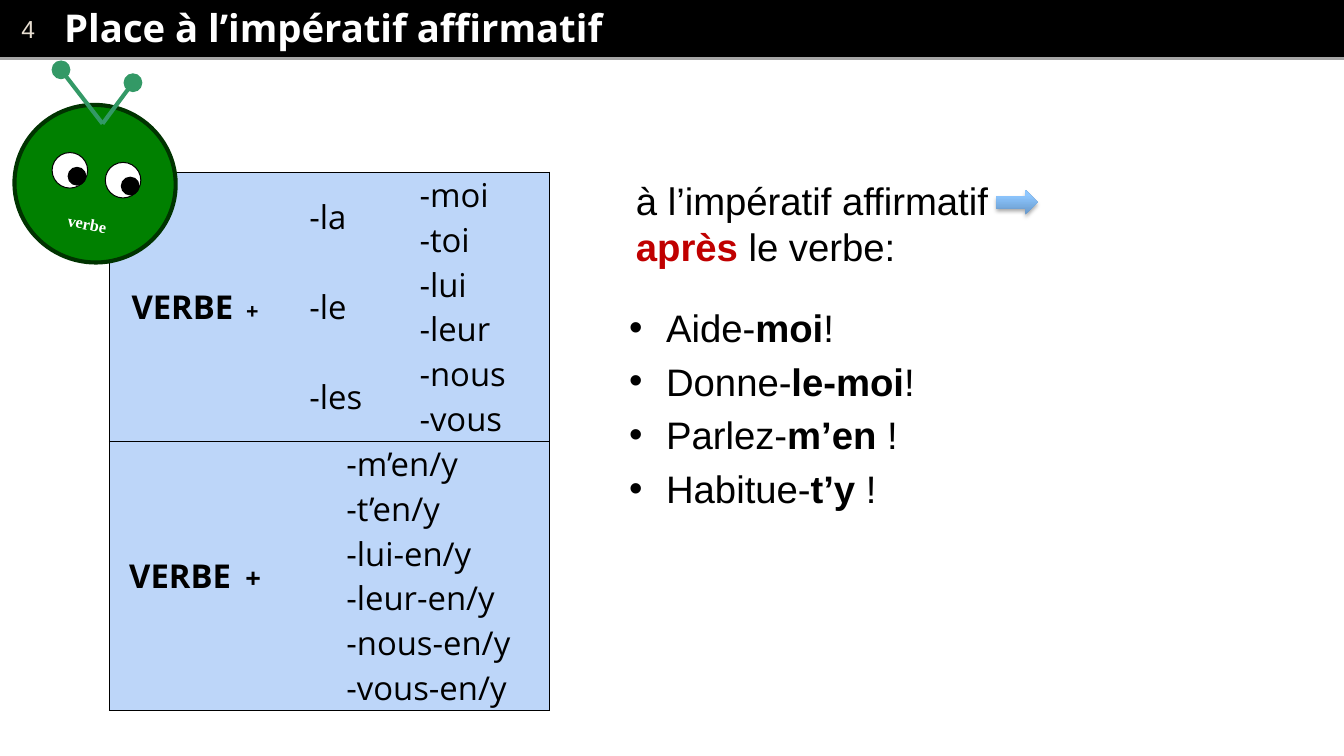
from dataclasses import dataclass

from lxml.etree import SubElement
from pptx import Presentation
from pptx.dml.color import RGBColor
from pptx.enum.shapes import MSO_CONNECTOR, MSO_SHAPE
from pptx.enum.text import MSO_ANCHOR, PP_ALIGN
from pptx.oxml.ns import qn
from pptx.util import Pt


@dataclass(frozen=True)
class Theme:
    black: str = "000000"
    white: str = "FFFFFF"
    page_number: str = "E7DED1"
    rule: str = "A6A6A6"
    cell: str = "BDD6F9"
    accent: str = "C00000"
    skin: str = "008000"
    skin_edge: str = "003300"
    antenna: str = "339966"
    arrow_dark: str = "6798CA"
    arrow_light: str = "8EC7FF"
    heading_font: str = "Open Sans"
    body_font: str = "Arial"
    label_font: str = "Times New Roman"
    large: int = 28
    medium: int = 24
    gap: int = 20
    number: int = 18
    small: int = 16
    label: int = 12


THEME = Theme()
TILT = 10.7
LINE_HEIGHT = 32.8


def rgb(code):
    return RGBColor.from_string(code)


def write(paragraph, text, size=THEME.medium, font=THEME.heading_font,
          color=THEME.black, bold=False, accent=None, align=None, before=None,
          indent=0, bullet=None):
    """Append text to a paragraph; parts between ** are bold, in the accent colour if given."""
    for index, part in enumerate(text.split("**")):
        if not part:
            continue
        strong = index % 2 == 1
        run = paragraph.add_run()
        run.text = part
        run.font.size = Pt(size)
        run.font.name = font
        run.font.bold = bold or strong
        run.font.color.rgb = rgb(accent if strong and accent else color)
    if align is not None:
        paragraph.alignment = align
    if before is not None:
        paragraph.space_before = Pt(before)
    properties = paragraph._p.get_or_add_pPr()
    if indent:
        properties.set("marL", str(Pt(indent)))
    if bullet:
        properties.set("indent", str(-Pt(indent)))
        SubElement(properties, qn("a:buFont"), typeface=THEME.body_font)
        SubElement(properties, qn("a:buChar"), char=bullet)


def set_borders(cell, dark_sides):
    properties = cell._tc.get_or_add_tcPr()
    for side in "LRTB":
        line = SubElement(properties, qn(f"a:ln{side}"), w=str(Pt(1)))
        if side in dark_sides:
            fill = SubElement(line, qn("a:solidFill"))
            SubElement(fill, qn("a:srgbClr"), val=THEME.black)
        else:
            SubElement(line, qn("a:noFill"))


class SlideBuilder:
    def __init__(self, slide, theme):
        self.slide = slide
        self.theme = theme
        self.shapes = slide.shapes

    def start_group(self):
        self.shapes = self.slide.shapes.add_group_shape().shapes

    def shape(self, kind, left, top, width, height, fill, line=None, weight=0.75, rotation=0):
        shape = self.shapes.add_shape(kind, Pt(left), Pt(top), Pt(width), Pt(height))
        shape.shadow.inherit = False
        shape.rotation = rotation
        shape.fill.solid()
        shape.fill.fore_color.rgb = rgb(fill)
        if line:
            shape.line.color.rgb = rgb(line)
            shape.line.width = Pt(weight)
        else:
            shape.line.fill.background()
        return shape

    def disc(self, x, y, diameter, fill, line):
        """Draw a circle around the centre x, y."""
        return self.shape(MSO_SHAPE.OVAL, x - diameter / 2, y - diameter / 2,
                          diameter, diameter, fill, line)

    def line(self, start, end, color, weight):
        line = self.shapes.add_connector(MSO_CONNECTOR.STRAIGHT, *map(Pt, start + end))
        line.line.color.rgb = rgb(color)
        line.line.width = Pt(weight)
        SubElement(line._element.spPr, qn("a:effectLst"))

    def text_box(self, left, top, width, height, wrap=True, anchor=MSO_ANCHOR.TOP, rotation=0):
        box = self.shapes.add_textbox(Pt(left), Pt(top), Pt(width), Pt(height))
        box.rotation = rotation
        box.text_frame.word_wrap = wrap
        box.text_frame.vertical_anchor = anchor
        return box.text_frame

    def gradient_arrow(self, left, top, width, height):
        arrow = self.shape(MSO_SHAPE.RIGHT_ARROW, left, top, width, height, self.theme.arrow_light)
        arrow.fill.gradient()
        arrow.fill.gradient_angle = 90
        stops = arrow.fill.gradient_stops
        for stop, color, position in zip(stops, (self.theme.arrow_dark, self.theme.arrow_light), (0, 0.8)):
            stop.color.rgb = rgb(color)
            stop.position = position
        effects = arrow._element.spPr.find(qn("a:effectLst"))
        shadow = SubElement(effects, qn("a:outerShdw"), blurRad=str(Pt(3.1)),
                            dist=str(Pt(1.8)), dir="5400000", rotWithShape="0")
        color = SubElement(shadow, qn("a:srgbClr"), val=self.theme.black)
        SubElement(color, qn("a:alpha"), val="35000")

    def table(self, left, top, widths, heights, split, merges):
        """Add a filled table, outlined in black and divided above the row split.

        Each merge is (first row, first column, last row, last column).
        """
        table = self.shapes.add_table(len(heights), len(widths), Pt(left), Pt(top),
                                      Pt(sum(widths)), Pt(sum(heights))).table
        table.first_row = table.horz_banding = False
        for r1, c1, r2, c2 in merges:
            table.cell(r1, c1).merge(table.cell(r2, c2))
        for column, width in zip(table.columns, widths):
            column.width = Pt(width)
        for r, height in enumerate(heights):
            table.rows[r].height = Pt(height)
            for c in range(len(widths)):
                cell = table.cell(r, c)
                next_row, next_column = r + cell.span_height, c + cell.span_width
                edges = {"L": c == 0, "R": next_column == len(widths),
                         "T": r in (0, split), "B": next_row in (split, len(heights))}
                set_borders(cell, [side for side, dark in edges.items() if dark])
                cell.fill.solid()
                cell.fill.fore_color.rgb = rgb(self.theme.cell)
                cell.vertical_anchor = MSO_ANCHOR.MIDDLE
                cell.margin_left = cell.margin_right = Pt(5)
                cell.margin_top = cell.margin_bottom = 0
        return table


def add_header(builder):
    bar = builder.shape(MSO_SHAPE.RECTANGLE, 0, 0, 982.8, 42, THEME.black, THEME.black)
    bar.text_frame.vertical_anchor = MSO_ANCHOR.MIDDLE
    write(bar.text_frame.paragraphs[0], "4", THEME.number, THEME.body_font,
          THEME.page_number, align=PP_ALIGN.LEFT, indent=8.6)
    builder.line((0, 43), (982.8, 43), THEME.rule, 2)
    title = builder.text_box(44, 0, 925, 40, anchor=MSO_ANCHOR.MIDDLE)
    title.margin_left = title.margin_right = title.margin_top = title.margin_bottom = Pt(3)
    write(title.paragraphs[0], "Place à l’impératif affirmatif", THEME.large,
          color=THEME.white, bold=True)


def add_pronoun_table(builder):
    direct = ["-la", "-le", "-les"]
    indirect = [("-moi", "-toi"), ("-lui", "-leur"), ("-nous", "-vous")]
    adverbial = ["-m’en/y", "-t’en/y", "-lui-en/y", "-leur-en/y", "-nous-en/y", "-vous-en/y"]
    split = len(direct)
    end = split + len(adverbial)
    merges = [(0, 0, split - 1, 0), (0, 2, split - 1, 2), (split, 0, end - 1, 0)]
    merges += [(row, 1, row, 3) for row in range(split, end)]
    heights = [2 * LINE_HEIGHT] * split + [LINE_HEIGHT] * len(adverbial)
    table = builder.table(80, 126, [125.3, 71.3, 13.7, 111.6], heights, split, merges)
    for row, plus_size in ((0, THEME.small), (split, THEME.gap)):
        paragraph = table.cell(row, 0).text_frame.paragraphs[0]
        write(paragraph, "VERBE", bold=True, align=PP_ALIGN.CENTER)
        write(paragraph, " ", THEME.gap)
        write(paragraph, " +", plus_size, bold=True)
    for row, (pronoun, pair) in enumerate(zip(direct, indirect)):
        write(table.cell(row, 1).text_frame.paragraphs[0], pronoun, indent=16)
        frame = table.cell(row, 3).text_frame
        write(frame.paragraphs[0], pair[0], indent=11.5)
        write(frame.add_paragraph(), pair[1], indent=11.5)
    for row, pronoun in enumerate(adverbial, split):
        write(table.cell(row, 1).text_frame.paragraphs[0], pronoun, indent=43)


def add_rule_and_examples(builder):
    frame = builder.text_box(453, 126, 324, 328)
    write(frame.paragraphs[0], "à l’impératif affirmatif **après** le verbe:", THEME.large,
          THEME.body_font, accent=THEME.accent, before=6.5, indent=5)
    examples = ["Aide-**moi**!", "Donne-**le-moi**!", "Parlez-**m’en** !", "Habitue-**t’y** !"]
    for index, example in enumerate(examples):
        write(frame.add_paragraph(), example, THEME.large, THEME.body_font,
              before=5.8 if index else 25.5, indent=27, bullet="•")
    builder.gradient_arrow(728.6, 139, 30.2, 18)


def add_verb_creature(builder):
    builder.start_group()
    builder.shape(MSO_SHAPE.OVAL, 10.5, 76.8, 118, 115.2, THEME.skin, THEME.skin_edge, 3, TILT)
    for x, y in ((51.1, 124.6), (90, 131.8)):
        builder.disc(x, y, 26, THEME.white, THEME.black)
        builder.disc(x + 5.2, y + 4.3, 13, THEME.black, THEME.black)
    for x, y in ((44.6, 51.1), (97.2, 60.5)):
        builder.line((x, y), (75, 90.5), THEME.antenna, 3)
        builder.disc(x, y, 13, THEME.antenna, THEME.antenna)
    label = builder.text_box(31, 152.6, 64.8, 26, wrap=False, rotation=TILT)
    write(label.paragraphs[0], "verbe", THEME.label, THEME.label_font, THEME.white,
          bold=True, align=PP_ALIGN.CENTER)


def main():
    presentation = Presentation()
    presentation.slide_width = Pt(982.8)
    presentation.slide_height = Pt(553)
    builder = SlideBuilder(presentation.slides.add_slide(presentation.slide_layouts[6]), THEME)
    add_header(builder)
    add_pronoun_table(builder)
    add_rule_and_examples(builder)
    add_verb_creature(builder)
    presentation.save("out.pptx")


if __name__ == "__main__":
    main()
